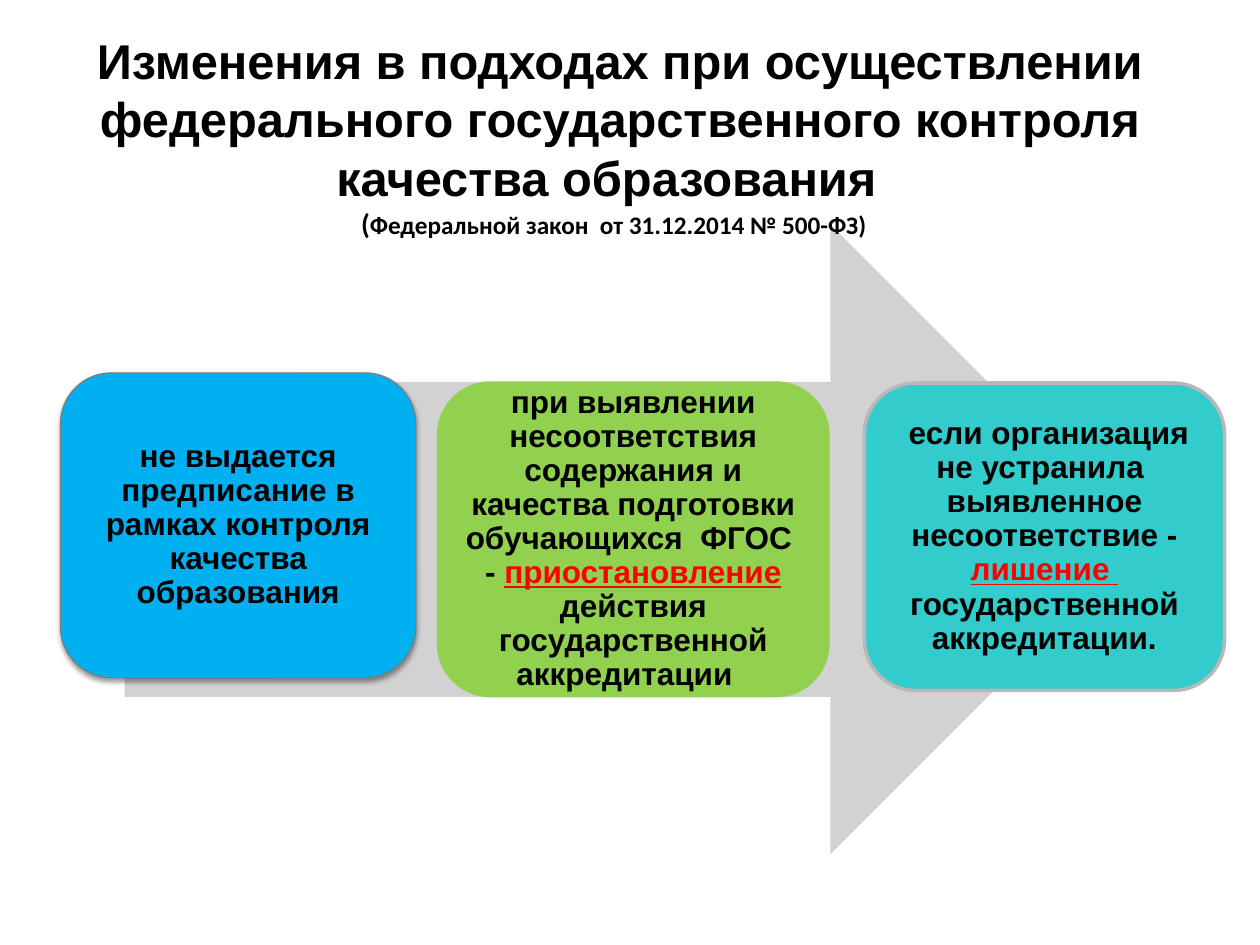
from lxml.etree import SubElement
from pptx import Presentation
from pptx.dml.color import RGBColor
from pptx.enum.shapes import MSO_SHAPE as Shape
from pptx.enum.text import MSO_ANCHOR as Anchor, PP_ALIGN as Align
from pptx.oxml.ns import qn
from pptx.util import Pt

COLORS = {
    "text": "000000", "accent": "FF0000", "arrow": "D2D2D2",
    "blue": "00B0F0", "green": "92D050", "teal": "33CCCC",
    "dark_line": "7D7D7D", "light_line": "B8B8B8", "shadow": "000000",
}


def rgb(name):
    return RGBColor.from_string(COLORS[name])


class SlideBuilder:
    font = "Arial"
    card_size = 18
    card_inset = 5

    def __init__(self, slide):
        self.slide = slide

    def shape(self, kind, box, fill, line=None, line_width=2):
        shape = self.slide.shapes.add_shape(kind, *map(Pt, box))
        shape.shadow.inherit = False
        shape.fill.solid()
        shape.fill.fore_color.rgb = rgb(fill)
        if line:
            shape.line.color.rgb = rgb(line)
            shape.line.width = Pt(line_width)
        else:
            shape.line.fill.background()
        return shape

    def first_paragraph(self, shape, inset_x, inset_y):
        frame = shape.text_frame
        frame.word_wrap = True
        frame.vertical_anchor = Anchor.MIDDLE
        frame.margin_left = frame.margin_right = Pt(inset_x)
        frame.margin_top = frame.margin_bottom = Pt(inset_y)
        paragraph = frame.paragraphs[0]
        paragraph.alignment = Align.CENTER
        paragraph.font.bold = True
        paragraph.font.color.rgb = rgb("text")
        return paragraph

    def card(self, box, fill, line, line_width, before, key="", after=""):
        """Rounded card whose key word is red and underlined."""
        shape = self.shape(Shape.ROUNDED_RECTANGLE, box, fill, line, line_width)
        paragraph = self.first_paragraph(shape, self.card_inset, self.card_inset)
        paragraph.line_spacing = 0.9
        paragraph.font.name = self.font
        paragraph.font.size = Pt(self.card_size)
        paragraph.add_run().text = before
        if key:
            key_run = paragraph.add_run()
            key_run.text = key
            key_run.font.underline = True
            key_run.font.color.rgb = rgb("accent")
            paragraph.add_run().text = after
        return shape

    def drop_shadow(self, shape, blur, distance, opacity):
        effects = shape._element.spPr.find(qn("a:effectLst"))
        shadow = SubElement(effects, qn("a:outerShdw"), blurRad=str(Pt(blur)),
                            dist=str(Pt(distance)), dir="5400000", rotWithShape="0")
        color = SubElement(shadow, qn("a:srgbClr"), val=COLORS["shadow"])
        SubElement(color, qn("a:alpha"), val=str(opacity * 1000))

    def title(self, box, heading, subtitle_runs):
        text_box = self.slide.shapes.add_textbox(*map(Pt, box))
        paragraph = self.first_paragraph(text_box, 7.2, 3.6)
        heading_run = paragraph.add_run()
        heading_run.text = heading
        heading_run.font.name = self.font
        heading_run.font.size = Pt(27.9)
        paragraph.add_line_break()
        for text, size in subtitle_runs:
            run = paragraph.add_run()
            run.text = text
            run.font.name = "Calibri"
            run.font.size = Pt(size)


def main():
    presentation = Presentation()
    presentation.slide_width, presentation.slide_height = Pt(720), Pt(540)
    builder = SlideBuilder(presentation.slides.add_slide(presentation.slide_layouts[6]))

    # Background arrow
    builder.shape(Shape.RIGHT_ARROW, (71.3, 128.2, 583.2, 360), "arrow")

    # Three steps
    first_card = builder.card(
        (34.6, 213.1, 203, 174.2), "blue", "dark_line", 0.75,
        "не выдается предписание в рамках контроля качества образования")
    builder.drop_shadow(first_card, blur=3.1, distance=1.6, opacity=38)
    builder.card(
        (250.6, 218.9, 222.5, 178.6), "green", "green", 2,
        "при выявлении несоответствия содержания и качества подготовки "
        "обучающихся  ФГОС  - ",
        "приостановление", " действия государственной аккредитации  ")
    builder.card(
        (493.9, 218.9, 205.9, 175.7), "teal", "light_line", 2,
        " если организация не устранила  выявленное несоответствие - ",
        "лишение ", " государственной аккредитации.")

    # Title
    builder.title(
        (42.5, 15.1, 623.5, 124.6),
        "Изменения в подходах при осуществлении федерального "
        "государственного контроля качества образования  ",
        [("(", 16.2), ("Федеральной закон  от 31.12.2014 № 500-ФЗ) ", 14.4), (" ", 16.2)])

    presentation.save("out.pptx")


if __name__ == "__main__":
    main()
